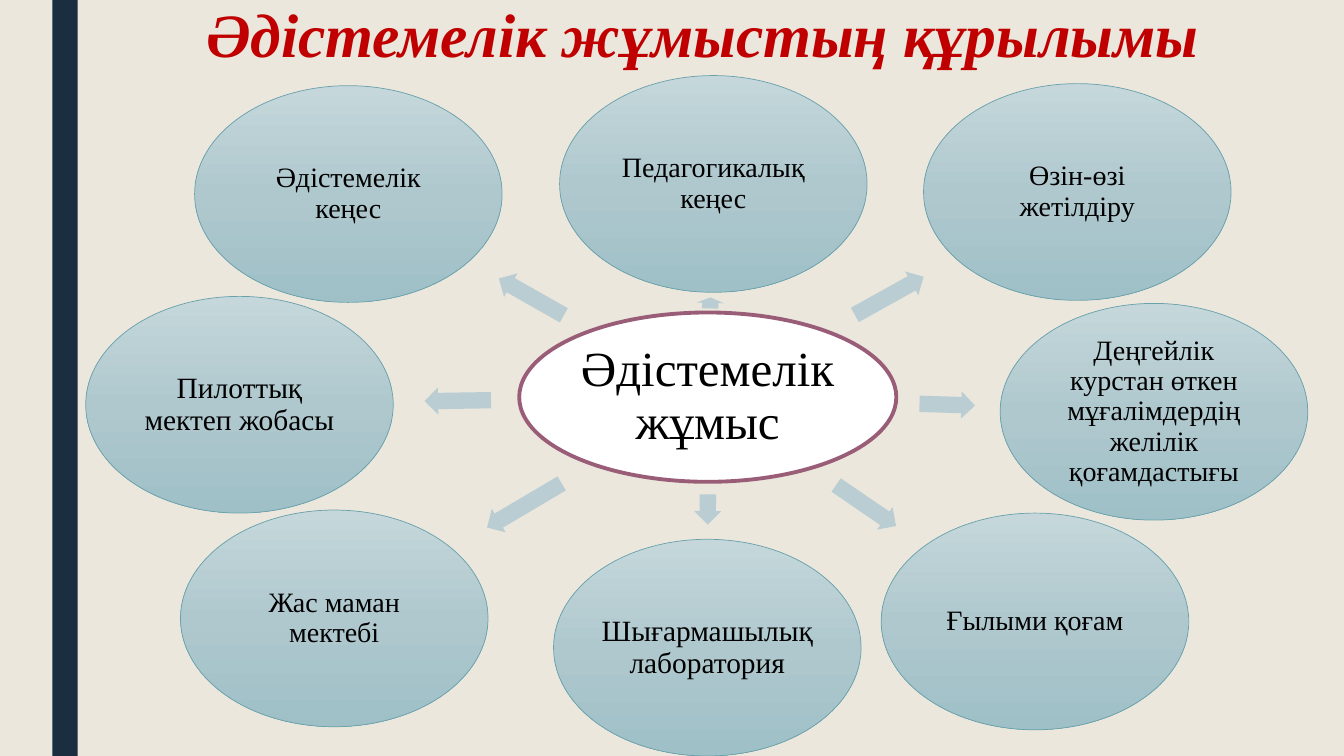
from copy import deepcopy

from pptx import Presentation
from pptx.dml.color import RGBColor
from pptx.enum import shapes, text
from pptx.oxml import ns
from pptx.util import Inches, Pt

FONT = "Times New Roman"
COLORS = {
    "back": "EBE7DD", "band": "1A2E40", "title": "C00000", "ink": "000000",
    "hub": "FFFFFF", "ring": "9A5D78", "arrow": "B9CDD2", "edge": "69A1AB",
    "top": "C5D7DB", "mid": "AFC8CE", "low": "9FC0C7",
}
NODE_W, NODE_H, ARROW_H = 3.05, 2.15, 0.27

NODES = [
    ("Педагогикалық кеңес", 20, (5.55, 0.75), (6.99, 2.87, 0.11, 271.5)),
    ("Өзін-өзі жетілдіру", 20, (9.16, 0.83), (8.43, 2.8, 0.78, 330.9)),
    ("Деңгейлік курстан өткен мұғалімдердің желілік қоғамдастығы", 20,
     (9.92, 3.01), (9.12, 3.88, 0.55, 1.8)),
    ("Ғылыми қоғам", 20, (8.74, 5.09), (8.23, 4.88, 0.72, 34.4)),
    ("Шығармашылық лаборатория", 21, (5.49, 5.35), (6.87, 4.92, 0.3, 90.1)),
    ("Жас маман мектебі", 20, (1.79, 5.06), (4.77, 4.88, 0.86, 149.4)),
    ("Пилоттық мектеп жобасы", 21, (0.85, 2.94), (4.21, 3.84, 0.66, 179.1)),
    ("Әдістемелік кеңес", 20, (1.93, 0.85), (4.9, 2.81, 0.74, 209.6)),
]


def rgb(name):
    return RGBColor.from_string(COLORS[name])


def write(shape, words, size, color="ink", align=text.PP_ALIGN.CENTER,
          anchor=text.MSO_ANCHOR.MIDDLE, inset=(0.03, 0.03), space=0.9,
          bold=False, italic=False):
    frame = shape.text_frame
    frame.word_wrap = True
    frame.auto_size = text.MSO_AUTO_SIZE.NONE
    frame.vertical_anchor = anchor
    frame.margin_left = frame.margin_right = Inches(inset[0])
    frame.margin_top = frame.margin_bottom = Inches(inset[1])
    para = frame.paragraphs[0]
    para.alignment = align
    para.line_spacing = space
    run = para.add_run()
    run.text = words
    font = run.font
    font.name, font.size = FONT, Pt(size)
    font.bold, font.italic = bold, italic
    font.color.rgb = rgb(color)


def draw(slide, kind, box, fill=None, line=None, width=0.5):
    shape = slide.shapes.add_shape(kind, *map(Inches, box))
    shape.shadow.inherit = False
    if fill:
        shape.fill.solid()
        shape.fill.fore_color.rgb = rgb(fill)
    if line:
        shape.line.color.rgb = rgb(line)
        shape.line.width = Pt(width)
    else:
        shape.line.fill.background()
    return shape


def shade(shape):
    fill = shape.fill
    fill.gradient()
    fill.gradient_angle = 270
    stops = shape._element.spPr.find(ns.qn("a:gradFill")).find(ns.qn("a:gsLst"))
    stops.insert(1, deepcopy(stops[0]))
    for stop, place, name in zip(fill.gradient_stops, (0, 0.5, 1),
                                 ("top", "mid", "low")):
        stop.position = place
        stop.color.rgb = rgb(name)


def add_title(slide, box):
    title = slide.shapes.title
    title.left, title.top, title.width, title.height = map(Inches, box)
    write(title, "Әдістемелік жұмыстың құрылымы", 44, color="title",
          align=text.PP_ALIGN.RIGHT, anchor=text.MSO_ANCHOR.TOP,
          inset=(0.1, 0.05), space=0.89, bold=True, italic=True)


def add_hub(slide, box):
    hub = draw(slide, shapes.MSO_SHAPE.OVAL, box, "hub", "ring", 2.75)
    write(hub, "Әдістемелік жұмыс", 35, inset=(0.05, 0.05))


def add_arrow(slide, box, turn):
    arrow = draw(slide, shapes.MSO_SHAPE.RIGHT_ARROW, box, "arrow")
    arrow.adjustments[0], arrow.adjustments[1] = 0.6, 0.5
    arrow.rotation = turn


def add_node(slide, box, words, size):
    node = draw(slide, shapes.MSO_SHAPE.OVAL, box, line="edge")
    shade(node)
    write(node, words, size)


def main():
    deck = Presentation()
    deck.slide_width, deck.slide_height = Inches(13.33), Inches(7.5)
    slide = deck.slides.add_slide(deck.slide_layouts[5])
    back = slide.background.fill
    back.solid()
    back.fore_color.rgb = rgb("back")
    draw(slide, shapes.MSO_SHAPE.RECTANGLE, (0.52, 0, 0.25, 7.5), "band")
    add_title(slide, (1.68, 0, 10.32, 1.11))
    add_hub(slide, (5.15, 3.1, 3.74, 1.68))
    for words, size, (left, top), (x, y, length, turn) in NODES:
        add_arrow(slide, (x, y, length, ARROW_H), turn)
        add_node(slide, (left, top, NODE_W, NODE_H), words, size)
    deck.save("out.pptx")


if __name__ == "__main__":
    main()
